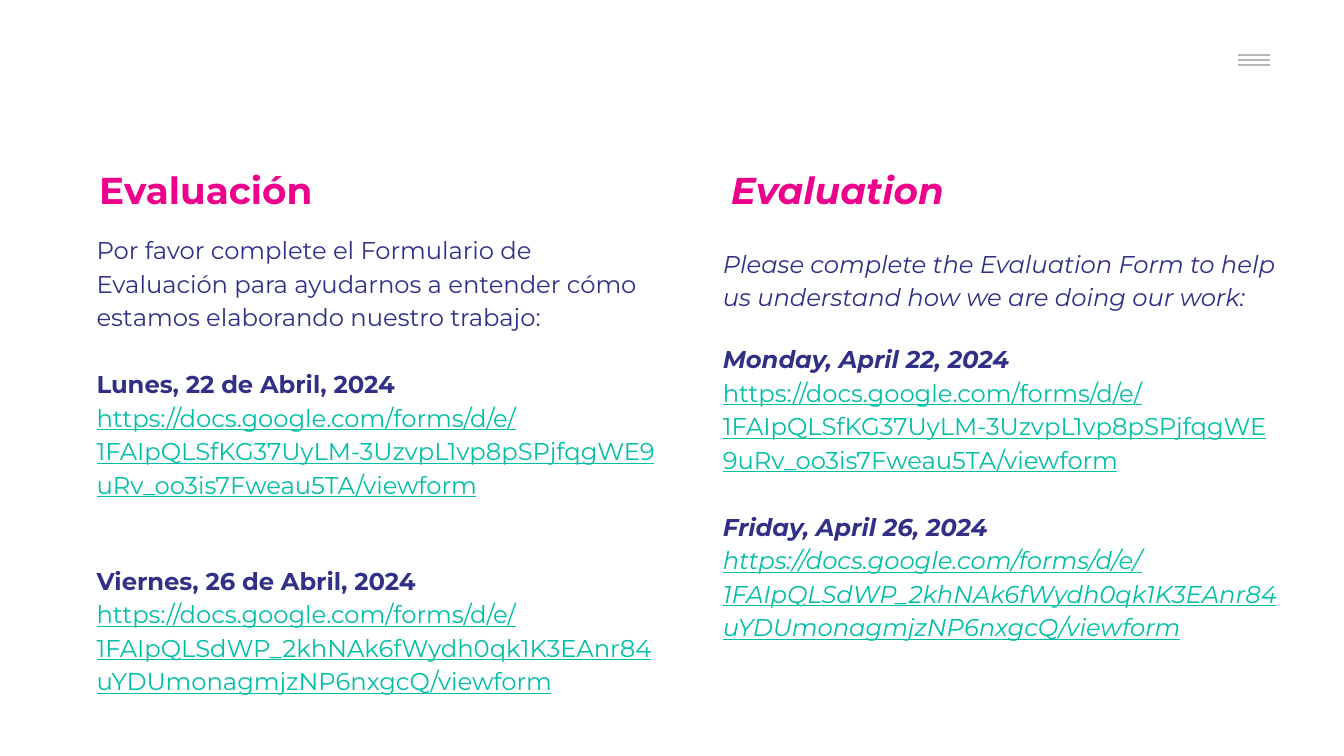
"""Build the bilingual evaluation slide with its form links."""
from lxml.etree import SubElement
from pptx import Presentation
from pptx.dml.color import RGBColor
from pptx.enum.shapes import MSO_CONNECTOR
from pptx.oxml.ns import qn
from pptx.util import Inches, Pt

WHITE = RGBColor(0xFF, 0xFF, 0xFF)
PINK = RGBColor(0xEC, 0x00, 0x8C)
NAVY = RGBColor(0x31, 0x30, 0x87)
TEAL = RGBColor(0x00, 0xBF, 0xA5)
GRAY = RGBColor(0xB7, 0xB7, 0xB7)

FORMS = "https://docs.google.com/forms/d/e/"
MONDAY = FORMS + "1FAIpQLSfKG37UyLM-3UzvpL1vp8pSPjfqgWE9uRv_oo3is7Fweau5TA/viewform"
FRIDAY = FORMS + "1FAIpQLSdWP_2khNAk6fWydh0qk1K3EAnr84uYDUmonagmjzNP6nxgcQ/viewform"

prs = Presentation()
prs.slide_width, prs.slide_height = Inches(10), Inches(5.625)
COL, ROW = prs.slide_width / 100, prs.slide_height / 100
s = prs.slides.add_slide(prs.slide_layouts[6])


def add_box(left, top, width, height):
    sp = s.shapes.add_textbox(int(left * COL), int(top * ROW), int(width * COL), int(height * ROW))
    tf = sp.text_frame
    tf.word_wrap = True
    tf.margin_left = tf.margin_right = tf.margin_top = tf.margin_bottom = Inches(0.1)
    return sp


def add_run(p, text, size, color, bold=False, italic=False, underline=False):
    r = p.add_run()
    r.text = text
    f = r.font
    f.name, f.size, f.color.rgb = "Montserrat", Pt(size), color
    f.bold, f.italic, f.underline = bold, italic, underline


for i in range(3):
    y = int((7.28 + 0.66 * i) * ROW)
    line = s.shapes.add_connector(MSO_CONNECTOR.STRAIGHT, int(92.1 * COL), y, int(94.5 * COL), y)
    line.line.color.rgb = GRAY
    line.line.width = Pt(0.75)
    SubElement(line._element.spPr, qn("a:effectLst"))

titles = [
    ("Evaluación", (6.4, 20.27, 43.3, 64.89), False),
    ("Evaluation", (53.4, 20.27, 42.2, 10.49), True),
]
for text, place, italic in titles:
    sp = add_box(*place)
    sp.fill.solid()
    sp.fill.fore_color.rgb = WHITE
    add_run(sp.text_frame.paragraphs[0], text, 20, PINK, bold=True, italic=italic)

bodies = [
    ((52.8, 30.58, 43.3, 63.11), True, [
        ("Please complete the Evaluation Form to help us understand how we are doing our work:", 0, "intro", True),
        ("Monday, April 22, 2024", 15.3, "date", True),
        (MONDAY, 0, "link", False),
        ("Friday, April 26, 2024", 18, "date", True),
        (FRIDAY, 0, "link", True),
    ]),
    ((6.2, 28.8, 43.8, 59.56), False, [
        ("Por favor complete el Formulario de Evaluación para ayudarnos a entender cómo "
         "estamos elaborando nuestro trabajo:", 0, "intro", False),
        ("Lunes, 22 de Abril, 2024", 18, "date", False),
        (MONDAY, 0, "link", False),
        ("Viernes, 26 de Abril, 2024", 33.5, "date", False),
        (FRIDAY, 0, "link", False),
    ]),
]
for place, _, paragraphs in bodies:
    tf = add_box(*place).text_frame
    for i, (text, before, role, italic) in enumerate(paragraphs):
        p = tf.add_paragraph() if i else tf.paragraphs[0]
        p.line_spacing = 1.15
        if before:
            p.space_before = Pt(before)
        add_run(p, text, 13, TEAL if role == "link" else NAVY,
                bold=role == "date", italic=italic, underline=role == "link")

prs.save("out.pptx")
